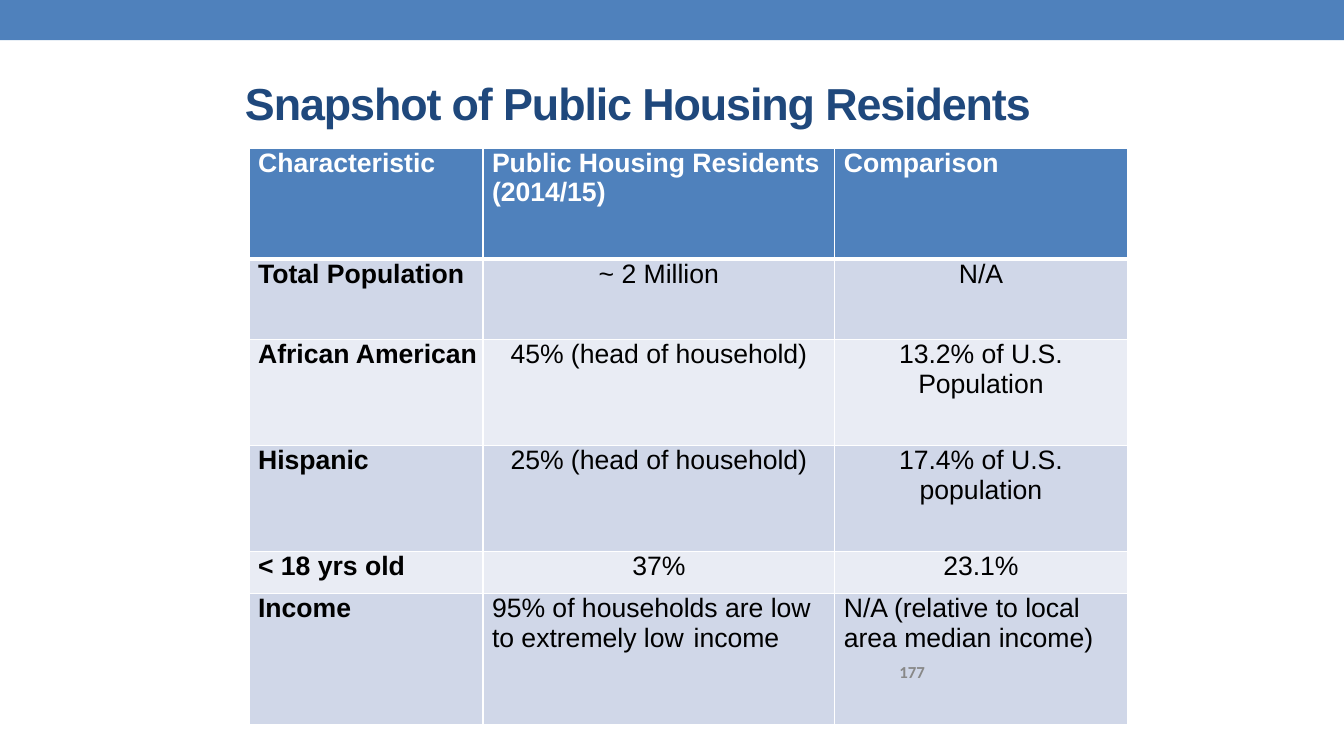
import pptx
import pptx.util
import pptx.dml.color
import pptx.enum.shapes
import pptx.enum.text
import pptx.oxml.ns
import lxml.etree

Inches = pptx.util.Inches
Pt = pptx.util.Pt
Align = pptx.enum.text.PP_ALIGN
qn = pptx.oxml.ns.qn

COLORS = {"blue": "4F81BC", "navy": "1F487C", "dark": "D0D7E8",
          "light": "E9ECF4", "white": "FFFFFF", "black": "000000",
          "gray": "888888"}
COLS = [2.32, 3.49, 2.9]
ROWS = [1.1, 0.8, 1.05, 1.05, 0.42, 1.3]
CELLS = [
    ["Characteristic", "Public Housing Residents (2014/15)", "Comparison"],
    ["Total Population", "~ 2 Million", "N/A"],
    ["African American", "45% (head of household)", "13.2% of U.S.\nPopulation"],
    ["Hispanic", "25% (head of household)", "17.4% of U.S.\npopulation"],
    ["< 18 yrs old", "37%", "23.1%"],
    ["Income", "95% of households are low to extremely low\tincome",
     "N/A (relative to local area median income)\n177"],
]


def rgb(name):
    """Return the named colour."""
    return pptx.dml.color.RGBColor.from_string(COLORS[name])


def style(para, size, color, bold, face="Arial"):
    """Format every run of a paragraph."""
    for run in para.runs:
        run.font.size = Pt(size)
        run.font.name = face
        run.font.bold = bold
        run.font.color.rgb = rgb(color)


def indent(para, left):
    """Set the left indent of a paragraph in inches."""
    props = para._p.get_or_add_pPr()
    props.set("marL", str(Inches(left)))
    props.set("indent", "0")
    return props


def border(cell, top, bottom):
    """Draw white lines around a cell, with widths in points."""
    props = cell._tc.get_or_add_tcPr()
    for tag, width in (("lnL", 1), ("lnR", 1), ("lnT", top), ("lnB", bottom)):
        line = lxml.etree.SubElement(props, qn("a:" + tag), w=str(Pt(width)))
        fill = lxml.etree.SubElement(line, qn("a:solidFill"))
        lxml.etree.SubElement(fill, qn("a:srgbClr"), val=COLORS["white"])


def add_band(slide, left, top, width, height):
    """Draw the band along the top edge."""
    band = slide.shapes.add_shape(
        pptx.enum.shapes.MSO_SHAPE.RECTANGLE,
        Inches(left), Inches(top), Inches(width), Inches(height))
    band.shadow.inherit = False
    band.fill.solid()
    band.fill.fore_color.rgb = rgb("blue")
    band.line.fill.background()


def add_title(slide, left, top, width, height):
    """Write the slide title."""
    box = slide.shapes.add_textbox(
        Inches(left), Inches(top), Inches(width), Inches(height))
    frame = box.text_frame
    frame.word_wrap = True
    frame.margin_left = frame.margin_right = frame.margin_bottom = 0
    frame.margin_top = Inches(0.45)
    frame.text = "Snapshot of Public Housing Residents"
    para = frame.paragraphs[0]
    indent(para, 2.11)
    style(para, 32, "navy", True)
    for run in para.runs:
        run.font._element.set("spc", "-80")


def fill_cell(cell, text, row, col):
    """Fill one table cell according to its row and column."""
    head, last = row == 0, row == len(ROWS) - 1
    border(cell, 3 if row == 1 else 1, 3 if head else 1)
    cell.fill.solid()
    cell.fill.fore_color.rgb = rgb(
        "blue" if head else "dark" if row % 2 else "light")
    cell.margin_left = cell.margin_right = 0
    cell.margin_top = cell.margin_bottom = 0
    cell.text_frame.text = text
    for para in cell.text_frame.paragraphs:
        style(para, 19, "white" if head else "black", head or col == 0)
        if head or last or col == 0:
            props = indent(para, 0.09)
            if "\t" in para.text:
                tabs = lxml.etree.SubElement(props, qn("a:tabLst"))
                lxml.etree.SubElement(
                    tabs, qn("a:tab"), pos=str(Inches(2.15)), algn="l")
        else:
            para.alignment = Align.CENTER


def add_grid(slide, left, top):
    """Build the table of residents."""
    shape = slide.shapes.add_table(
        len(ROWS), len(COLS), Inches(left), Inches(top),
        Inches(sum(COLS)), Inches(sum(ROWS)))
    table = shape.table
    for col, width in zip(table.columns, COLS):
        col.width = Inches(width)
    for row, height in zip(table.rows, ROWS):
        row.height = Inches(height)
    for r, texts in enumerate(CELLS):
        for c, text in enumerate(texts):
            fill_cell(table.cell(r, c), text, r, c)
    page = table.cell(len(ROWS) - 1, len(COLS) - 1).text_frame.paragraphs[-1]
    indent(page, 0.64)
    page.line_spacing = Pt(11.6)
    page.space_before = Pt(10.1)
    style(page, 12, "gray", True, "Calibri")


def main():
    """Build and save the slide."""
    deck = pptx.Presentation()
    deck.slide_width = Inches(13.33)
    deck.slide_height = Inches(7.5)
    slide = deck.slides.add_slide(deck.slide_layouts[6])
    add_band(slide, 0, 0, 13.33, 0.4)
    add_title(slide, 0.32, 0.3, 12.69, 1.13)
    add_grid(slide, 2.47, 1.47)
    deck.save("out.pptx")


if __name__ == "__main__":
    main()
